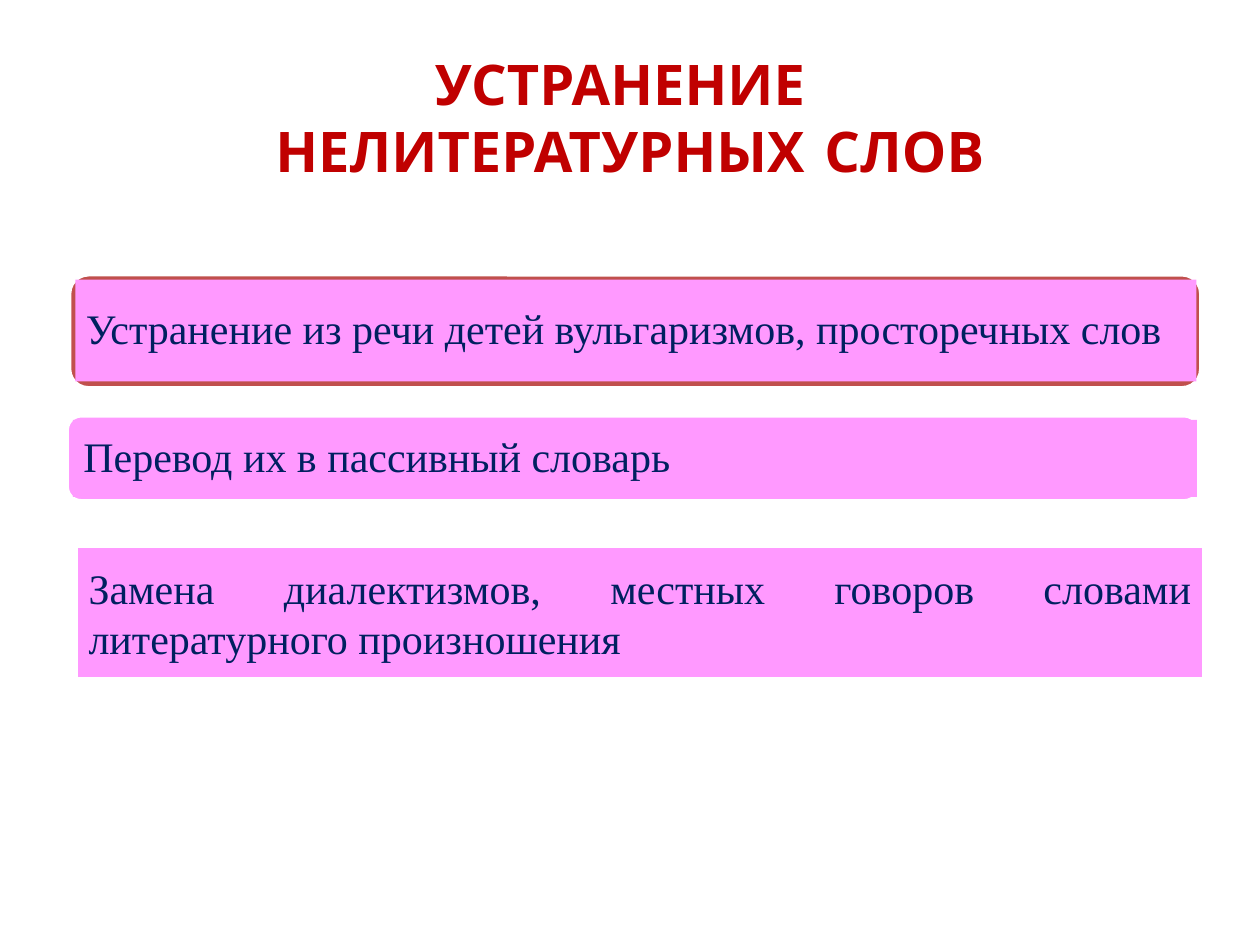
from pptx import Presentation
from pptx.dml.color import RGBColor
from pptx.enum import shapes, text
from pptx.util import Pt

WHITE = RGBColor(0xFF, 0xFF, 0xFF)
RED = RGBColor(0xC0, 0x00, 0x00)
BRICK = RGBColor(0xC0, 0x50, 0x4D)
PINK = RGBColor(0xFF, 0x99, 0xFF)
NAVY = RGBColor(0x00, 0x20, 0x60)
ROUND = shapes.MSO_SHAPE.ROUNDED_RECTANGLE
RECT = shapes.MSO_SHAPE.RECTANGLE
ALIGN = text.PP_ALIGN


class Deck:
    """Hold the style and the current slide, and draw each kind of element."""

    def __init__(self, show):
        self.slide = show.slides.add_slide(show.slide_layouts[5])

    def font(self, para, name, size, color, bold=False):
        para.font.name = name
        para.font.size = Pt(size)
        para.font.color.rgb = color
        para.font.bold = bold

    def title(self, words, box):
        head = self.slide.shapes.title
        head.left, head.top, head.width, head.height = map(Pt, box)
        frame = head.text_frame
        frame.text = words
        frame.word_wrap = True
        frame.vertical_anchor = text.MSO_ANCHOR.MIDDLE
        para = frame.paragraphs[0]
        para.alignment = ALIGN.CENTER
        self.font(para, "Comic Neue", 32, RED, True)

    def shape(self, kind, box, fill, line=None):
        item = self.slide.shapes.add_shape(kind, *map(Pt, box))
        item.shadow.inherit = False
        item.fill.solid()
        item.fill.fore_color.rgb = fill
        if line is None:
            item.line.fill.background()
        else:
            item.line.color.rgb = line
            item.line.width = Pt(2)
        return item

    def label(self, words, box, align=ALIGN.LEFT, space=0.9):
        item = self.shape(RECT, box, PINK)
        frame = item.text_frame
        frame.text = words
        frame.word_wrap = True
        frame.vertical_anchor = text.MSO_ANCHOR.MIDDLE
        frame.margin_left = frame.margin_right = Pt(6)
        frame.margin_top = frame.margin_bottom = Pt(6)
        para = frame.paragraphs[0]
        para.alignment = align
        para.line_spacing = space
        self.font(para, "Times New Roman", 24, NAVY)
        return item

    def card(self, words, back, front, fill):
        base = self.shape(ROUND, back, fill, WHITE)
        self.slide.shapes.add_group_shape([base, self.label(words, front)])


def main():
    show = Presentation()
    show.slide_width, show.slide_height = Pt(720), Pt(540)
    deck = Deck(show)
    deck.title("УСТРАНЕНИЕ \vНЕЛИТЕРАТУРНЫХ СЛОВ", (36, 21.6, 648, 90))
    deck.card("Устранение из речи детей вульгаризмов, просторечных слов",
              (39.8, 157, 646.4, 64.6), (43, 159.8, 640.6, 58.2), BRICK)
    deck.card("Перевод их в пассивный словарь",
              (38.4, 237.6, 646.4, 48.6), (41.6, 239.9, 642.3, 44.1), PINK)
    deck.label("Замена диалектизмов, местных говоров словами "
               "литературного произношения",
               (44.6, 313.2, 642.2, 73.6), ALIGN.JUSTIFY, 1.0)
    show.save("out.pptx")


if __name__ == "__main__":
    main()
